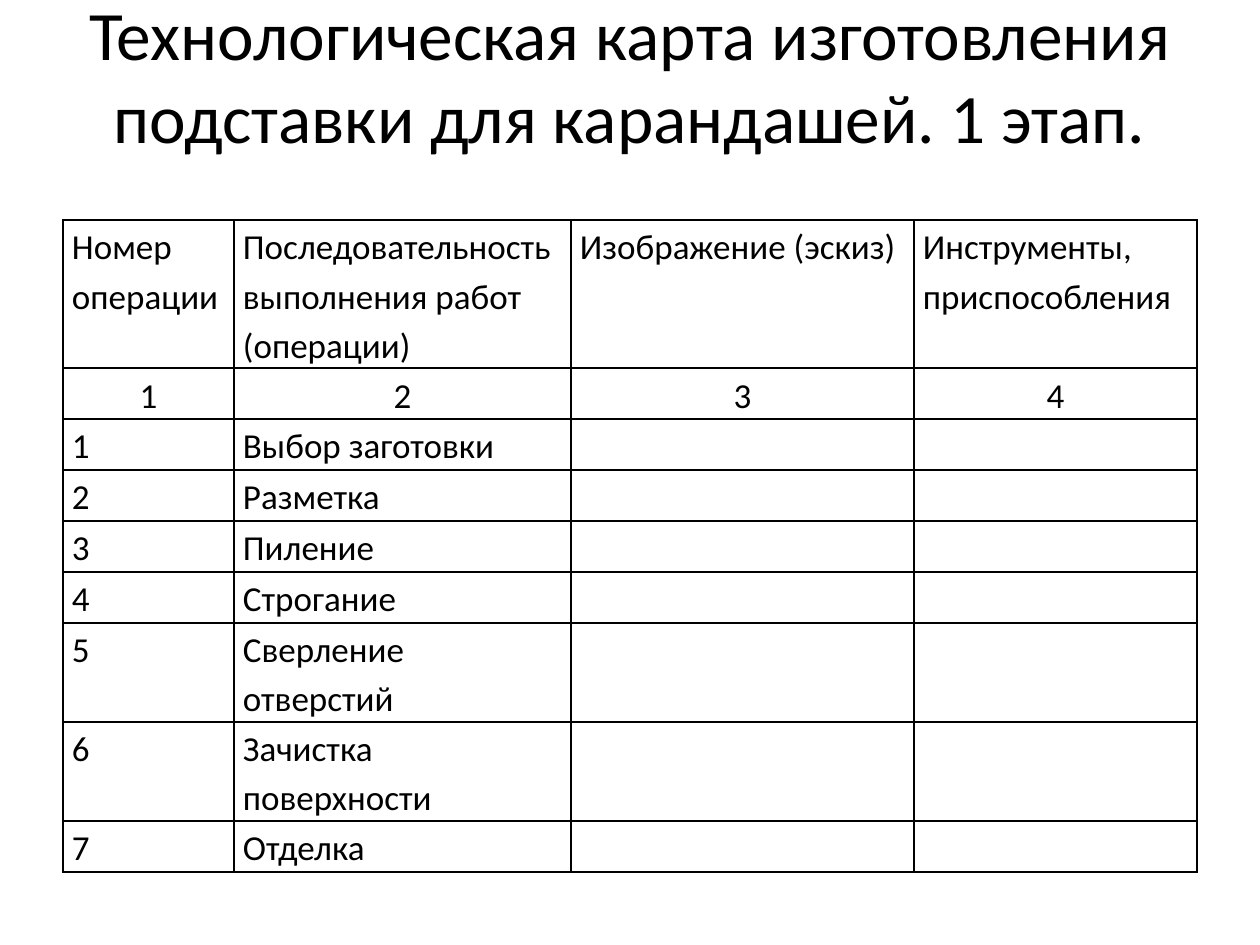
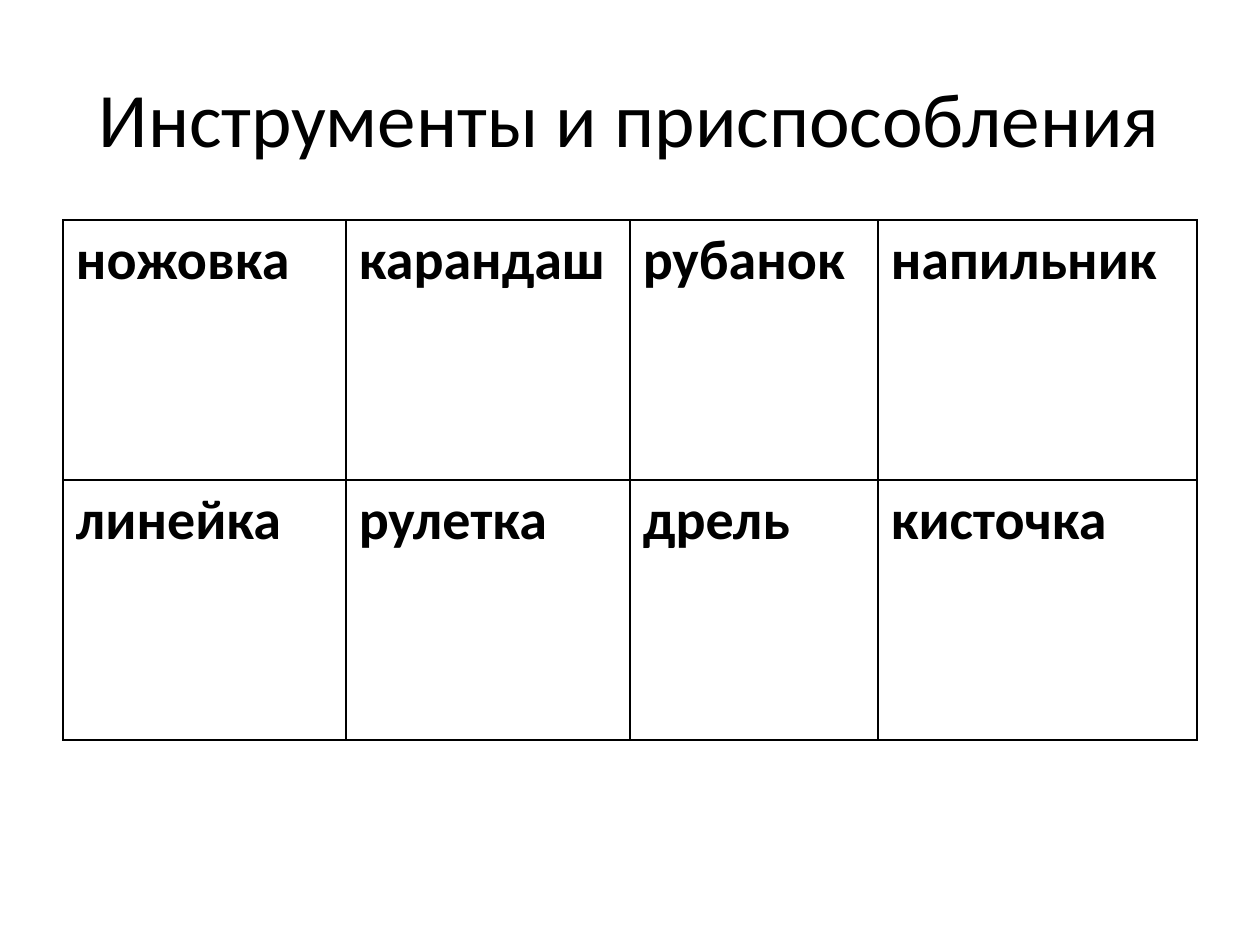
import dataclasses

import lxml.etree
import pptx
import pptx.dml.color
import pptx.enum.text
import pptx.oxml.ns
import pptx.util

ALIGN = pptx.enum.text.PP_ALIGN
ANCHOR = pptx.enum.text.MSO_ANCHOR
EMU_PER_PX = 914400 / 126


def px(length):
    return pptx.util.Emu(round(length * EMU_PER_PX))


@dataclasses.dataclass(frozen=True)
class Theme:
    font: str = "Calibri"
    ink: str = "000000"
    title_size: float = 44
    long_title_size: float = 39.6
    card_size: float = 20
    tool_size: float = 32
    border_width: float = 1


def set_attributes(target, values):
    for name, value in values.items():
        setattr(target, name, value)


class Deck:
    """Holds the style and the slide being built."""

    def __init__(self, theme):
        self.theme = theme
        self.presentation = pptx.Presentation()
        self.presentation.slide_width = px(1260)
        self.presentation.slide_height = px(945)
        self.slide = None

    def add_slide(self):
        layout = self.presentation.slide_layouts[6]
        self.slide = self.presentation.slides.add_slide(layout)

    def add_text(self, paragraph, text, size, bold=False):
        run = paragraph.add_run()
        run.text = text
        set_attributes(run.font, {
            "name": self.theme.font, "size": pptx.util.Pt(size), "bold": bold})
        run.font.color.rgb = pptx.dml.color.RGBColor.from_string(self.theme.ink)

    def add_title(self, text, size, bottom_margin=6):
        box = self.slide.shapes.add_textbox(px(63), px(38), px(1134), px(157))
        set_attributes(box.text_frame, {
            "word_wrap": True,
            "vertical_anchor": ANCHOR.MIDDLE,
            "margin_top": px(6),
            "margin_bottom": px(bottom_margin)})
        paragraph = box.text_frame.paragraphs[0]
        paragraph.alignment = ALIGN.CENTER
        self.add_text(paragraph, text, size)

    def add_borders(self, cell):
        properties = cell._tc.get_or_add_tcPr()
        width = str(pptx.util.Pt(self.theme.border_width))
        for index, side in enumerate(("lnL", "lnR", "lnT", "lnB")):
            line = lxml.etree.Element(pptx.oxml.ns.qn("a:" + side), w=width)
            fill = lxml.etree.SubElement(line, pptx.oxml.ns.qn("a:solidFill"))
            lxml.etree.SubElement(
                fill, pptx.oxml.ns.qn("a:srgbClr"), val=self.theme.ink)
            properties.insert(index, line)

    def add_table(self, rows, widths, heights, size, margins,
                  bold=False, line_spacing=1.0, centered_row=None):
        frame = self.slide.shapes.add_table(
            len(rows), len(widths), px(63), px(220),
            px(sum(widths)), px(sum(heights)))
        table = frame.table
        set_attributes(table, {"first_row": False, "horz_banding": False})
        for column, width in zip(table.columns, widths):
            column.width = px(width)
        for row, height in zip(table.rows, heights):
            row.height = px(height)

        side_margin, edge_margin = margins
        cell_format = {
            "margin_left": px(side_margin), "margin_right": px(side_margin),
            "margin_top": px(edge_margin), "margin_bottom": px(edge_margin)}
        for row_index, texts in enumerate(rows):
            centered = row_index == centered_row
            for column_index, text in enumerate(texts):
                cell = table.cell(row_index, column_index)
                set_attributes(cell, cell_format)
                cell.vertical_anchor = ANCHOR.MIDDLE if centered else ANCHOR.TOP
                cell.fill.background()
                self.add_borders(cell)
                if not text:
                    continue
                for number, part in enumerate(text.split("\n")):
                    text_frame = cell.text_frame
                    paragraph = (text_frame.add_paragraph() if number
                                 else text_frame.paragraphs[0])
                    set_attributes(paragraph, {
                        "alignment": ALIGN.CENTER if centered else ALIGN.LEFT,
                        "line_spacing": line_spacing})
                    self.add_text(paragraph, part, size, bold)


def main():
    theme = Theme()
    deck = Deck(theme)

    # Process card: two header rows, then numbered operations
    operations = ["Выбор заготовки", "Разметка", "Пиление", "Строгание",
                  "Сверление отверстий", "Зачистка поверхности", "Отделка"]
    card_rows = [
        ["Номер\nоперации", "Последовательность выполнения работ (операции)",
         "Изображение (эскиз)", "Инструменты, приспособления"],
        ["1", "2", "3", "4"],
    ] + [[str(number), operation, "", ""]
         for number, operation in enumerate(operations, 1)]
    deck.add_slide()
    deck.add_title("Технологическая карта изготовления подставки для карандашей. 1 этап.",
                   theme.long_title_size, bottom_margin=90)
    deck.add_table(card_rows, widths=[171, 337, 343, 283],
                   heights=[148] + [51] * 5 + [99] * 2 + [51],
                   size=theme.card_size, margins=(9, 0),
                   line_spacing=1.15, centered_row=1)

    # Tools
    tool_rows = [["ножовка", "карандаш", "рубанок", "напильник"],
                 ["линейка", "рулетка", "дрель", "кисточка"]]
    deck.add_slide()
    deck.add_title("Инструменты и приспособления", theme.title_size)
    deck.add_table(tool_rows, widths=[283, 284, 248, 319], heights=[260] * 2,
                   size=theme.tool_size, margins=(13, 6), bold=True)

    deck.presentation.save("out.pptx")


if __name__ == "__main__":
    main()
